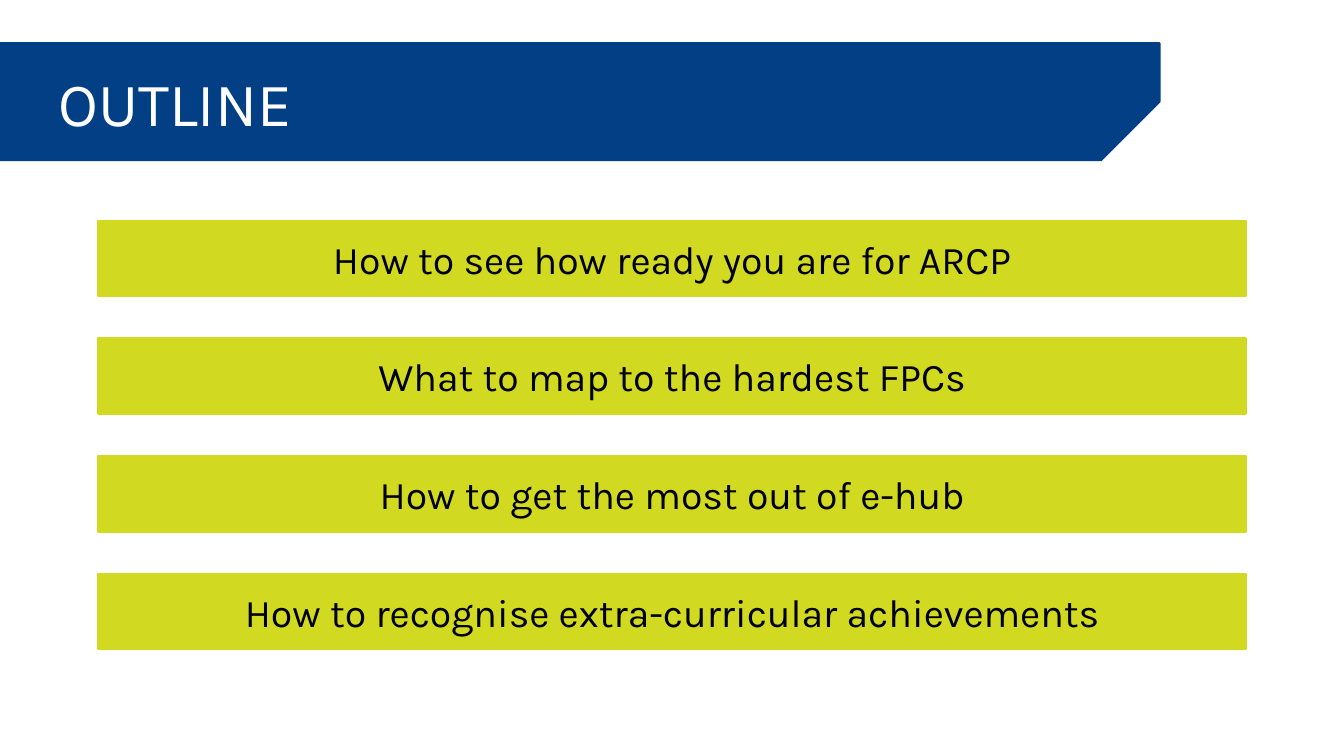
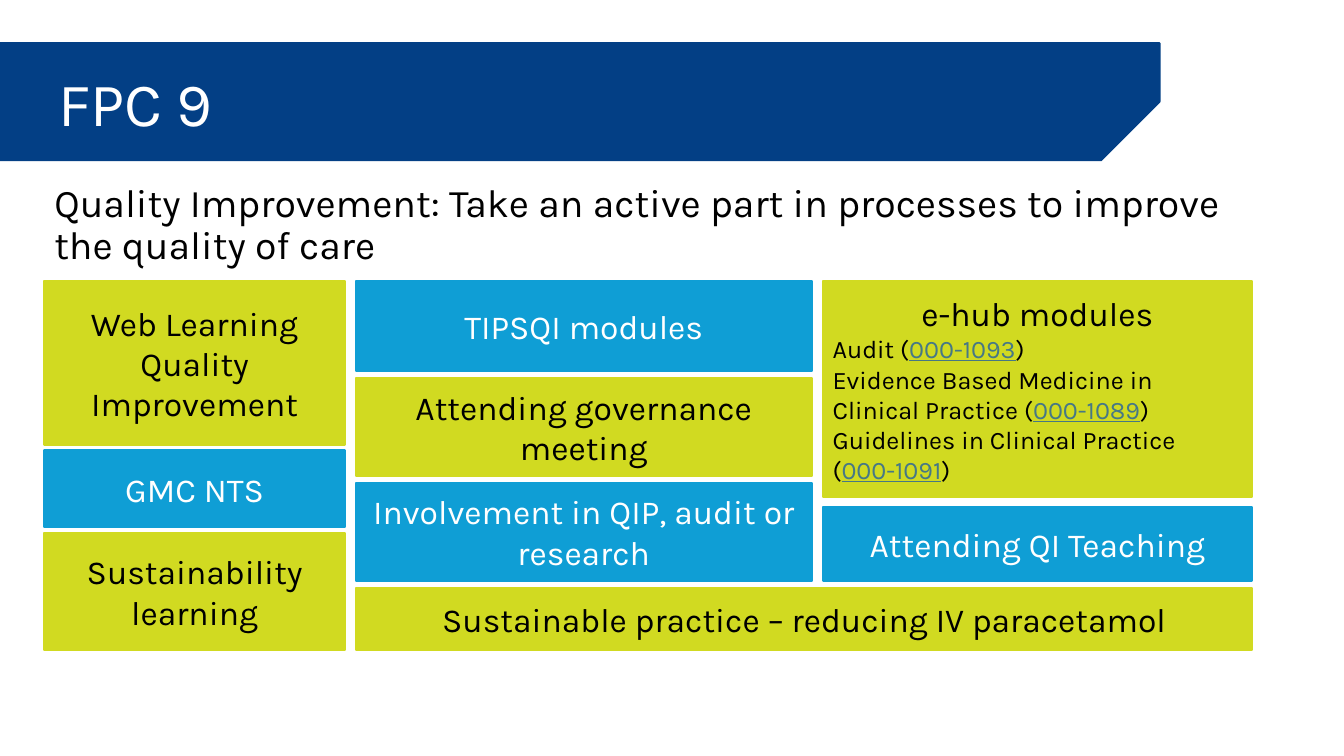
from itertools import accumulate
from typing import NamedTuple

from pptx import Presentation
from pptx.dml.color import RGBColor
from pptx.enum.shapes import MSO_SHAPE
from pptx.enum.text import MSO_ANCHOR, PP_ALIGN
from pptx.util import Inches, Pt

RECTANGLE, SNIPPED = MSO_SHAPE.RECTANGLE, MSO_SHAPE.SNIP_1_RECTANGLE
TOP, MIDDLE = MSO_ANCHOR.TOP, MSO_ANCHOR.MIDDLE
LEFT, CENTER = PP_ALIGN.LEFT, PP_ALIGN.CENTER

FONT = "Karla"
NAVY, LIME, BLUE = "033F85", "D1DA21", "0F9ED5"
BLACK, WHITE, LINK = "000000", "FFFFFF", "467886"
TEXT_ON = {LIME: BLACK, BLUE: WHITE}


class Box(NamedTuple):
    """A rectangle on the page, in inches."""

    left: float
    top: float
    width: float
    height: float

    def lengths(self):
        """Return the four measures as slide lengths."""
        return [Inches(value) for value in self]


PAGE = Box(0, 0, 13.33, 7.5)
BAND = Box(0, 0.43, 11.5, 1.16)
OUTLINE_AREA = Box(0.97, 2.19, 11.39, 4.25)
TILE_AREA = Box(0.44, 2.79, 11.98, 3.66)
TILE_COLUMNS = (2.98, 4.52, 4.26)

OUTLINE = (
    "How to see how ready you are for ARCP",
    "What to map to the hardest FPCs",
    "How to get the most out of e-hub",
    "How to recognise extra-curricular achievements",
)
MODULES = (
    ("Audit (", "000-1093"),
    ("Evidence Based Medicine in Clinical Practice (", "000-1089"),
    ("Guidelines in Clinical Practice (", "000-1091"),
)


def color(value):
    """Turn a hex string into a colour."""
    return RGBColor.from_string(value)


def add_span(para, text, size=24, ink=BLACK, underline=False):
    """Add one formatted run to a paragraph."""
    span = para.add_run()
    span.text = text
    span.font.name = FONT
    span.font.size = Pt(size)
    span.font.color.rgb = color(ink)
    span.font.underline = underline


def write(shape, text, align=CENTER, anchor=MIDDLE, spacing=1.0, **style):
    """Write the first paragraph of a shape."""
    frame = shape.text_frame
    frame.word_wrap = True
    frame.vertical_anchor = anchor
    para = frame.paragraphs[0]
    para.alignment = align
    para.line_spacing = spacing
    add_span(para, text, **style)


def add_block(page, box, fill, kind=RECTANGLE):
    """Draw a filled shape with a line of the same colour."""
    shape = page.shapes.add_shape(kind, *box.lengths())
    shape.shadow.inherit = False
    shape.fill.solid()
    shape.fill.fore_color.rgb = color(fill)
    shape.line.color.rgb = color(fill)
    shape.line.width = Pt(1.5)
    return shape


def add_label(page, box, text, **style):
    """Place a left-aligned text box with tight lines."""
    label = page.shapes.add_textbox(*box.lengths())
    write(label, text, align=LEFT, spacing=0.9, **style)


def add_title_band(page, box, title):
    """Draw the snipped band and its title."""
    band = add_block(page, box, NAVY, SNIPPED)
    band.adjustments[0] = 0.5
    band.element.spPr.xfrm.set("flipV", "1")
    title_box = Box(box.left + 0.48, box.top - 0.1, box.width, box.height + 0.29)
    add_label(page, title_box, title, size=44, ink=WHITE)


def add_stack(page, box, tiles, size=24):
    """Stack tiles of text, fill and height with equal gaps in a box."""
    heights = [height for _, _, height in tiles]
    gap = (box.height - sum(heights)) / max(len(tiles) - 1, 1)
    tops = accumulate((height + gap for height in heights), initial=box.top)
    shapes = []
    for (text, fill, height), top in zip(tiles, tops):
        tile = add_block(page, Box(box.left, top, box.width, height), fill)
        write(tile, text, size=size, ink=TEXT_ON[fill])
        shapes.append(tile)
    return shapes


def add_modules(tile):
    """List the course modules and their codes under the tile's heading."""
    for name, code in MODULES:
        para = tile.text_frame.add_paragraph()
        para.alignment = LEFT
        add_span(para, name, size=18)
        add_span(para, code, size=18, ink=LINK, underline=True)
        add_span(para, ")", size=18)


def add_tile_grid(page, box, gap=0.11):
    """Fill three columns and a wide bottom row with tiles."""
    first, second, third = accumulate(
        (width + gap for width in TILE_COLUMNS[:2]), initial=box.left
    )
    narrow, medium, last = TILE_COLUMNS
    footer = 0.62
    upper = box.height - footer - 0.07
    add_stack(page, Box(first, box.top, narrow, box.height), (
        ("Web Learning Quality Improvement", LIME, 1.62),
        ("GMC NTS", BLUE, 0.76),
        ("Sustainability learning", LIME, 1.16),
    ))
    add_stack(page, Box(second, box.top, medium, upper), (
        ("TIPSQI modules", BLUE, 0.89),
        ("Attending governance meeting", LIME, 0.97),
        ("Involvement in QIP, audit or research", BLUE, 0.97),
    ))
    modules, _ = add_stack(page, Box(third, box.top, last, upper), (
        ("e-hub modules", LIME, 2.14),
        ("Attending QI Teaching", BLUE, 0.73),
    ))
    add_modules(modules)
    bottom = box.top + box.height - footer
    add_stack(page, Box(second, bottom, medium + gap + last, footer), (
        ("Sustainable practice – reducing IV paracetamol", LIME, footer),
    ))


def add_page(deck, title):
    """Add a blank page with the title band."""
    page = deck.slides.add_slide(deck.slide_layouts[6])
    add_title_band(page, BAND, title)
    return page


def add_outline_page(deck):
    """Add the page that lists the topics."""
    page = add_page(deck, "OUTLINE")
    add_stack(page, OUTLINE_AREA, [(topic, LIME, 0.75) for topic in OUTLINE], size=28)


def add_capability_page(deck):
    """Add the page with evidence for the ninth capability."""
    page = add_page(deck, "FPC 9")
    intro = Box(TILE_AREA.left, 1.77, 12.03, 1.37)
    add_label(
        page,
        intro,
        "Quality Improvement: Take an active part in processes to improve the quality of care",
        size=28,
        anchor=TOP,
    )
    add_tile_grid(page, TILE_AREA)


def main():
    """Build and save the deck."""
    deck = Presentation()
    deck.slide_width = Inches(PAGE.width)
    deck.slide_height = Inches(PAGE.height)
    add_outline_page(deck)
    add_capability_page(deck)
    deck.save("out.pptx")


if __name__ == "__main__":
    main()
